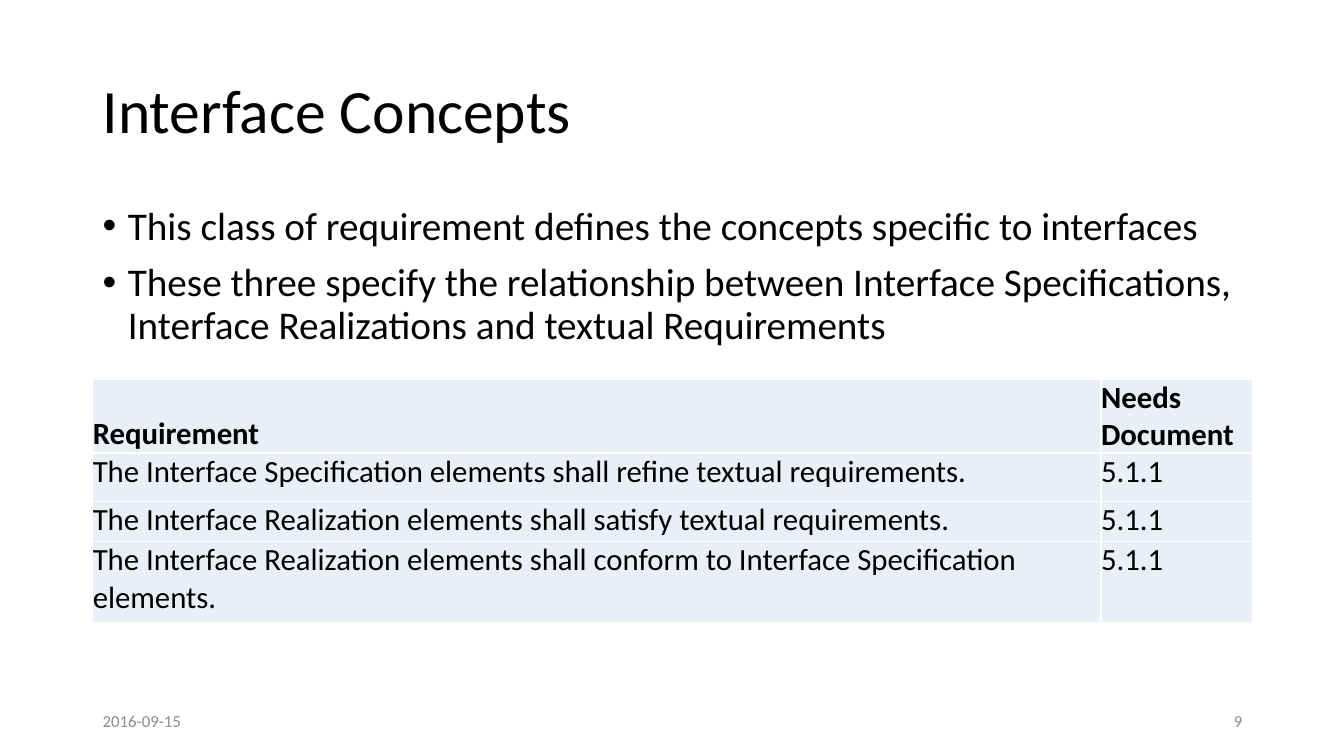
from lxml.etree import SubElement
from pptx import Presentation
from pptx.dml.color import RGBColor
from pptx.enum.text import MSO_ANCHOR, PP_ALIGN
from pptx.oxml.ns import qn
from pptx.util import Inches, Pt

BLACK = RGBColor(0x00, 0x00, 0x00)
GRAY = RGBColor(0x8C, 0x8C, 0x8C)
PALE_BLUE = RGBColor(0xEA, 0xEF, 0xF7)
WHITE = RGBColor(0xFF, 0xFF, 0xFF)

LEFT, CONTENT_WIDTH = 0.92, 11.5
FOOTER_TOP, FOOTER_WIDTH, FOOTER_HEIGHT = 6.95, 3, 0.4

BULLETS = [
    "This class of requirement defines the concepts specific to interfaces",
    "These three specify the relationship between Interface Specifications, "
    "Interface Realizations and textual Requirements",
]
REQUIREMENTS = [
    ("Requirement", "Needs Document"),
    ("The Interface Specification elements shall refine textual requirements.", "5.1.1"),
    ("The Interface Realization elements shall satisfy textual requirements.", "5.1.1"),
    ("The Interface Realization elements shall conform to Interface Specification elements.",
     "5.1.1"),
]
COLUMN_WIDTHS = [10, 1.5]
ROW_HEIGHTS = [0.72, 0.48, 0.4, 0.8]


def apply_format(target, values):
    for name, value in values.items():
        setattr(target, name, value)


class SlideBuilder:
    font_name = "Calibri"

    def __init__(self, slide):
        self.slide = slide

    def fill_paragraph(self, paragraph, text, size, color=BLACK, bold=False, **layout):
        run = paragraph.add_run()
        run.text = text
        apply_format(run.font, {"name": self.font_name, "size": Pt(size), "bold": bold})
        run.font.color.rgb = color
        apply_format(paragraph, layout)

    def text(self, box, lines, size, color=BLACK, anchor=MSO_ANCHOR.MIDDLE,
             bulleted=False, **layout):
        frame = self.slide.shapes.add_textbox(*map(Inches, box)).text_frame
        apply_format(frame, {"word_wrap": True, "vertical_anchor": anchor})
        for index, line in enumerate(lines):
            paragraph = frame.add_paragraph() if index else frame.paragraphs[0]
            self.fill_paragraph(paragraph, line, size, color, **layout)
            if bulleted:
                self.add_bullet(paragraph)

    def add_bullet(self, paragraph):
        properties = paragraph._p.get_or_add_pPr()
        properties.set("marL", str(Inches(0.25)))
        properties.set("indent", str(-Inches(0.25)))
        SubElement(properties, qn("a:buFont"), typeface="Arial")
        SubElement(properties, qn("a:buChar"), char="•")

    def add_borders(self, cell):
        """Draw thin white lines; they must precede the cell's fill in the XML."""
        properties = cell._tc.get_or_add_tcPr()
        for side in ("lnL", "lnR", "lnT", "lnB"):
            line = SubElement(properties, qn(f"a:{side}"), w=str(Pt(1)))
            fill = SubElement(line, qn("a:solidFill"))
            SubElement(fill, qn("a:srgbClr"), val=str(WHITE))

    def table(self, left, top, rows, column_widths, row_heights, size):
        box = (left, top, sum(column_widths), sum(row_heights))
        table = self.slide.shapes.add_table(
            len(rows), len(column_widths), *map(Inches, box)).table
        apply_format(table, {"first_row": False, "horz_banding": False})
        for column, width in zip(table.columns, column_widths):
            column.width = Inches(width)
        for row_index, (row, height) in enumerate(zip(table.rows, row_heights)):
            row.height = Inches(height)
            is_header = row_index == 0
            for cell, text in zip(row.cells, rows[row_index]):
                apply_format(cell, {
                    "margin_left": 0, "margin_right": 0,
                    "margin_top": 0, "margin_bottom": 0,
                    "vertical_anchor": MSO_ANCHOR.BOTTOM if is_header else MSO_ANCHOR.TOP,
                })
                self.add_borders(cell)
                cell.fill.solid()
                cell.fill.fore_color.rgb = PALE_BLUE
                self.fill_paragraph(cell.text_frame.paragraphs[0], text, size, bold=is_header)


def main():
    presentation = Presentation()
    presentation.slide_width = Inches(13.33)
    presentation.slide_height = Inches(7.5)
    builder = SlideBuilder(presentation.slides.add_slide(presentation.slide_layouts[6]))

    builder.text((LEFT, 0.4, CONTENT_WIDTH, 1.45), ["Interface Concepts"], 44,
                 line_spacing=0.9)
    builder.text((LEFT, 2, CONTENT_WIDTH, 4.76), BULLETS, 28, anchor=MSO_ANCHOR.TOP,
                 bulleted=True, line_spacing=0.9, space_before=Pt(10))
    builder.table(LEFT, 3.76, REQUIREMENTS, COLUMN_WIDTHS, ROW_HEIGHTS, 22)

    page_left = LEFT + CONTENT_WIDTH - FOOTER_WIDTH
    for left, text, alignment in [(LEFT, "2016-09-15", PP_ALIGN.LEFT),
                                  (page_left, "9", PP_ALIGN.RIGHT)]:
        builder.text((left, FOOTER_TOP, FOOTER_WIDTH, FOOTER_HEIGHT), [text], 12, GRAY,
                     alignment=alignment)
    presentation.save("out.pptx")


if __name__ == "__main__":
    main()
